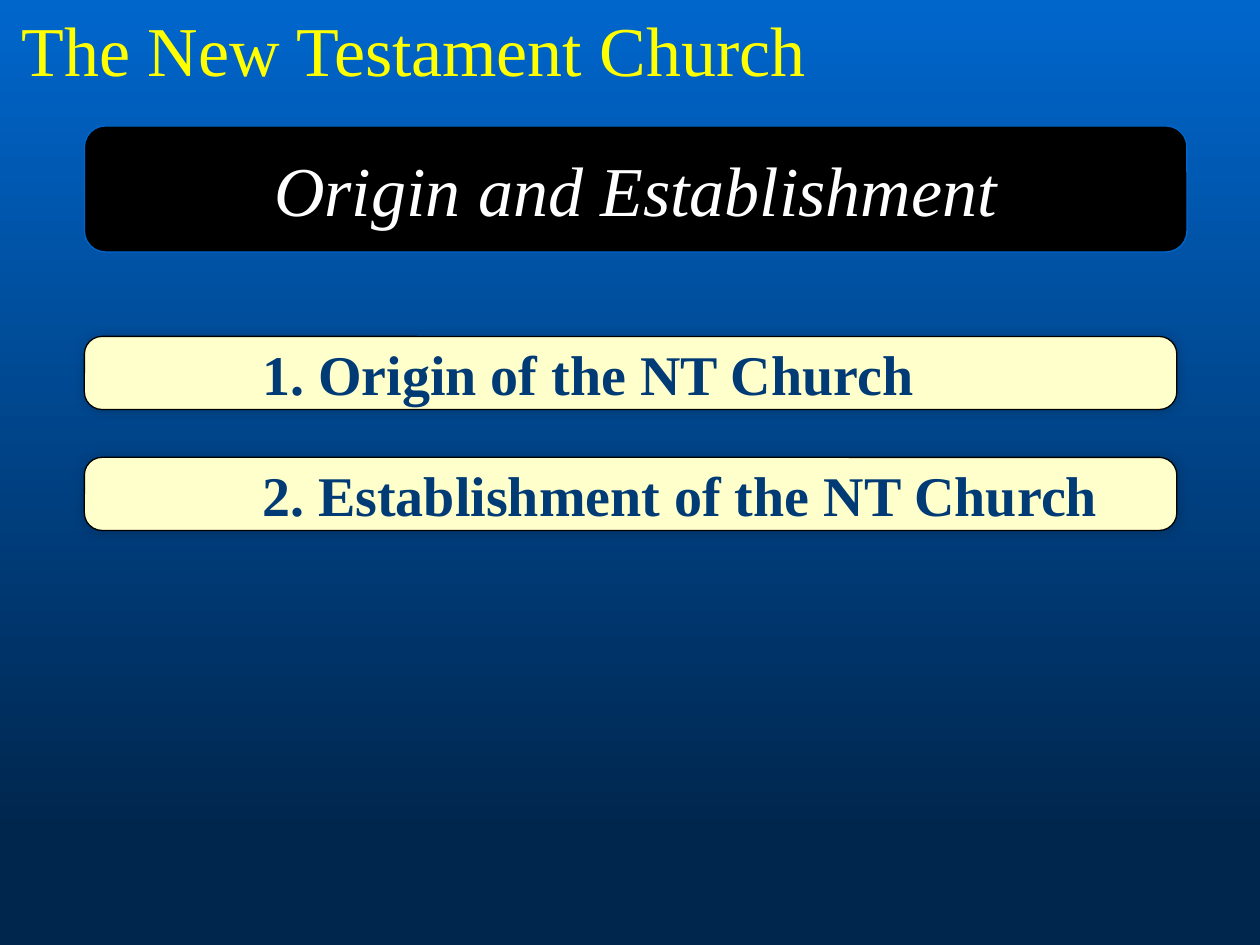
import pptx
import pptx.util
import pptx.dml.color
import pptx.enum.shapes
import pptx.enum.text
import pptx.oxml
import pptx.oxml.ns

COLORS = {
    "sky": "0066CC", "deep": "00264D", "title": "FFFF00", "black": "000000",
    "white": "FFFFFF", "cream": "FFFFCC", "navy": "003B76",
}
ALIGN = pptx.enum.text.PP_ALIGN
ANCHOR = pptx.enum.text.MSO_ANCHOR
inches = pptx.util.Inches


def rgb(name):
    return pptx.dml.color.RGBColor.from_string(COLORS[name])


def write(shape, wording, color, align, frame_format, font_format):
    frame = shape.text_frame
    frame.text = wording
    for name, value in frame_format.items():
        setattr(frame, name, value)
    paragraph = frame.paragraphs[0]
    paragraph.alignment = align
    font = paragraph.runs[0].font
    font.color.rgb = rgb(color)
    for name, value in {"name": "Times New Roman", **font_format}.items():
        setattr(font, name, value)


deck = pptx.Presentation()
deck.slide_width, deck.slide_height = inches(10), inches(7.5)
slide = deck.slides.add_slide(deck.slide_layouts[5])

background = slide.background.fill
background.gradient()
background.gradient_angle = 270
for stop, color, position in zip(background.gradient_stops, ("sky", "deep"), (0, 0.88)):
    stop.color.rgb = rgb(color)
    stop.position = position

heading = slide.shapes.title
heading.left, heading.top = inches(0.04), 0
heading.width, heading.height = inches(6.49), inches(0.77)
write(heading, "The New Testament Church", "title", ALIGN.CENTER,
      {"word_wrap": False, "vertical_anchor": ANCHOR.TOP,
       "auto_size": pptx.enum.text.MSO_AUTO_SIZE.SHAPE_TO_FIT_TEXT},
      {"size": pptx.util.Pt(40)})

# Banner and topic bars share the left margin.
margin = inches(0.67)
first_topic, topic_pitch = 2.67, 0.96
banner_text = ({"word_wrap": True, "vertical_anchor": ANCHOR.MIDDLE},
               {"size": pptx.util.Pt(40), "italic": True})
topic_text = ({"word_wrap": True, "vertical_anchor": ANCHOR.MIDDLE,
               "margin_left": inches(1.37), "margin_top": 0, "margin_bottom": 0},
              {"size": pptx.util.Pt(32), "bold": True})
banner_style = (8.75, 1, 0.1667, "black", "sky", "white", ALIGN.CENTER, banner_text)
topic_style = (8.67, 0.58, 0.241, "cream", "black", "navy", ALIGN.LEFT, topic_text)
bars = [
    ("Origin and Establishment", 1, banner_style),
    ("1. Origin of the NT Church", first_topic, topic_style),
    ("2. Establishment of the NT Church", first_topic + topic_pitch, topic_style),
]
for wording, top, style in bars:
    width, height, rounding, fill, line, ink, align, formats = style
    bar = slide.shapes.add_shape(
        pptx.enum.shapes.MSO_SHAPE.ROUNDED_RECTANGLE,
        margin, inches(top), inches(width), inches(height))
    bar.adjustments[0] = rounding
    bar.fill.solid()
    bar.fill.fore_color.rgb = rgb(fill)
    bar.line.color.rgb = rgb(line)
    bar.line.width = pptx.util.Pt(0.75)
    bar.shadow.inherit = False
    write(bar, wording, ink, align, *formats)
    if style is topic_style:
        effects = bar.element.spPr.find(pptx.oxml.ns.qn("a:effectLst"))
        effects.append(pptx.oxml.parse_xml(
            f'<a:outerShdw {pptx.oxml.ns.nsdecls("a")} blurRad="{pptx.util.Pt(6)}" '
            f'dist="0" dir="13500000"><a:srgbClr val="{COLORS["black"]}">'
            '<a:alpha val="20000"/></a:srgbClr></a:outerShdw>'))

deck.save("out.pptx")
